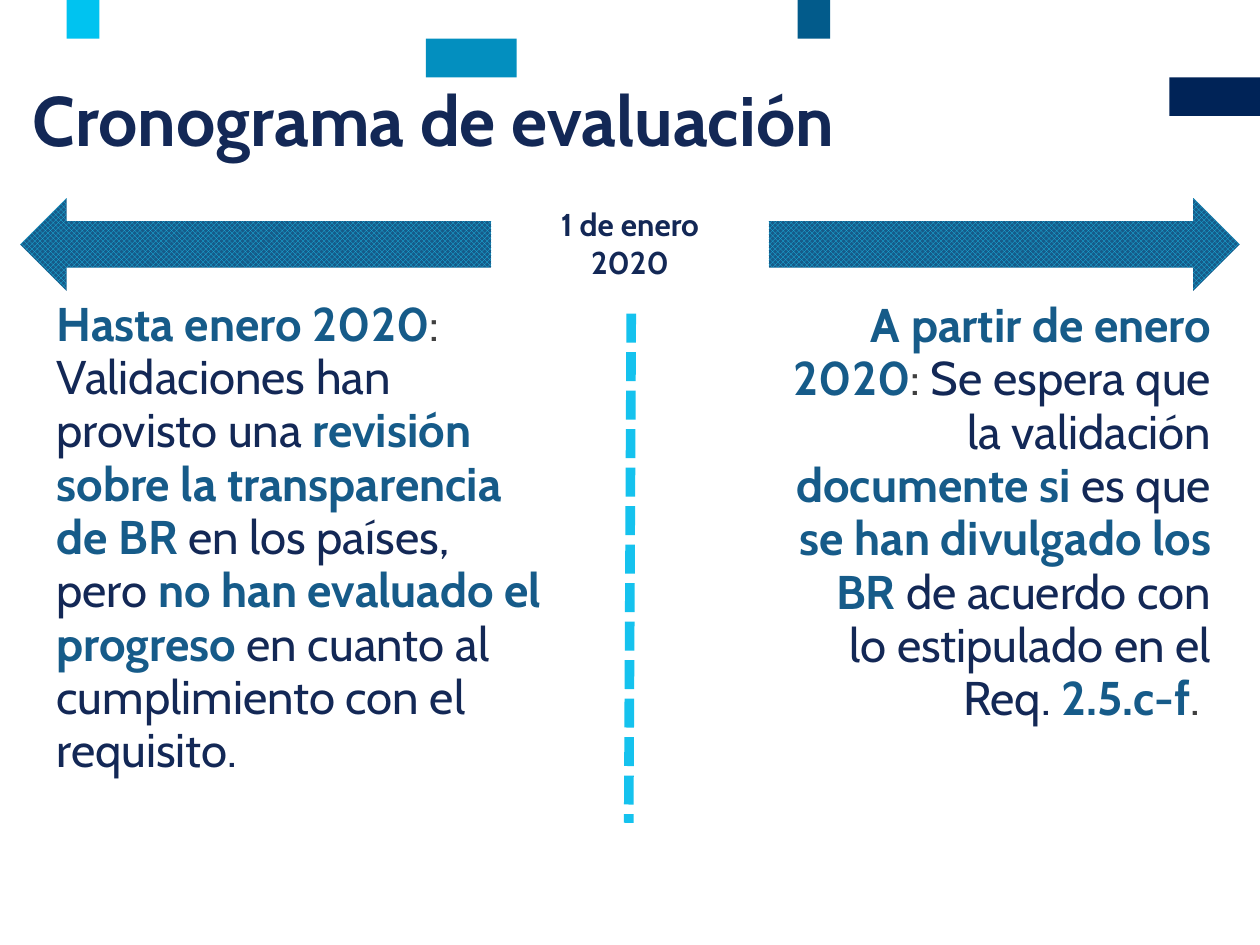
"""Build the slide 'Cronograma de evaluación' on a grid of 100 columns by 75 rows."""
from lxml import etree
from pptx import Presentation, util as u
from pptx.dml.color import RGBColor
from pptx.enum import dml, shapes, text
from pptx.oxml.ns import qn

THEME = {
    "font": "Cabin", "title": 40, "body": 27, "date": 18,
    "navy": "132856", "blue": "165B89", "grey": "404040", "cyan": "1CC0EE", "dash": "15C2EE",
    "blocks": ["002357", "025B8B", "038FBF", "00C3F0"],
}

prs = Presentation()
prs.slide_width, prs.slide_height = u.Inches(10), u.Inches(7.5)
COL, ROW = prs.slide_width / 100, prs.slide_height / 75
s = prs.slides.add_slide(prs.slide_layouts[5])


def grid(x, y, w, h):
    return int(x * COL), int(y * ROW), int(w * COL), int(h * ROW)


def style(r, size, color, bold):
    r.font.name, r.font.size, r.font.bold = THEME["font"], u.Pt(THEME[size]), bold
    r.font.color.rgb = RGBColor.from_string(THEME[color])


BLOCK_H = 3.07
blocks = [(92.8, 2, 7.2), (63.3, 0, 2.6), (33.8, 1, 7.2), (5.3, 0, 2.6)]
for (x, step, w), color in zip(blocks, THEME["blocks"]):
    sp = s.shapes.add_shape(shapes.MSO_SHAPE.RECTANGLE, *grid(x, step * BLOCK_H, w, BLOCK_H))
    sp.shadow.inherit = False
    sp.fill.solid()
    sp.fill.fore_color.rgb = RGBColor.from_string(color)
    sp.line.fill.background()

title = s.shapes.title
title.left, title.top, title.width, title.height = grid(1.6, 6.2, 89.5, 7.3)
tf = title.text_frame
tf.text = "Cronograma de evaluación"
tf.word_wrap, tf.auto_size = True, text.MSO_AUTO_SIZE.NONE
tf.vertical_anchor = text.MSO_ANCHOR.MIDDLE
p = tf.paragraphs[0]
p.alignment, p.line_spacing = text.PP_ALIGN.LEFT, 0.89
style(p.runs[0], "title", "navy", True)

columns = [
    ((58.5, 23.3, 38.6, 44.4), text.PP_ALIGN.RIGHT, [
        ("A partir de enero 2020", "blue"), (": ", "grey"),
        ("Se espera que la validación ", "navy"), ("documente si ", "blue"),
        ("es que ", "navy"), ("se han divulgado los BR ", "blue"),
        ("de acuerdo con lo estipulado en el Req. ", "navy"),
        ("2.5.c-f", "blue"), (". ", "grey")]),
    ((0, 23.2, 44.2, 40.6), text.PP_ALIGN.LEFT, [
        ("Hasta enero 2020", "blue"), (": ", "grey"),
        ("Validaciones han provisto una ", "navy"),
        ("revisión sobre la transparencia de BR ", "blue"),
        ("en los países, pero ", "navy"), ("no han evaluado el progreso ", "blue"),
        ("en cuanto al cumplimiento con el requisito.", "navy")]),
]
for place, align, parts in columns:
    tf = s.shapes.add_textbox(*grid(*place)).text_frame
    tf.word_wrap = True
    p = tf.paragraphs[0]
    p.alignment, p.line_spacing, p.space_after = align, 0.94, u.Pt(12)
    p._p.get_or_add_pPr().set("marL", str(u.Inches(0.35)))
    for words, color in parts:
        r = p.add_run()
        r.text = words
        style(r, "body", color, color == "blue")

for kind, x in [(shapes.MSO_SHAPE.LEFT_ARROW, 1.6), (shapes.MSO_SHAPE.RIGHT_ARROW, 61)]:
    sp = s.shapes.add_shape(kind, *grid(x, 15.7, 37.4, 7.4))
    sp.shadow.inherit = False
    sp.fill.patterned()
    sp.fill.pattern = dml.MSO_PATTERN.TRELLIS
    sp.fill.fore_color.rgb = RGBColor.from_string(THEME["cyan"])
    sp.fill.back_color.rgb = RGBColor.from_string(THEME["blue"])
    sp.line.fill.background()

tf = s.shapes.add_textbox(*grid(25.8, 15.8, 48.4, 7.1)).text_frame
tf.word_wrap = True
tf.text = "1 de enero\n2020"
for p in tf.paragraphs:
    p.alignment = text.PP_ALIGN.CENTER
    style(p.runs[0], "date", "navy", True)

divider = s.shapes.add_connector(
    shapes.MSO_CONNECTOR.STRAIGHT,
    int(50.1 * COL), int(24.9 * ROW), int(49.9 * COL), int(65.3 * ROW))
divider.line.color.rgb = RGBColor.from_string(THEME["dash"])
divider.line.width = u.Pt(5.5)
divider.line.dash_style = dml.MSO_LINE.SQUARE_DOT
etree.SubElement(divider._element.spPr, qn("a:effectLst"))

prs.save("out.pptx")
